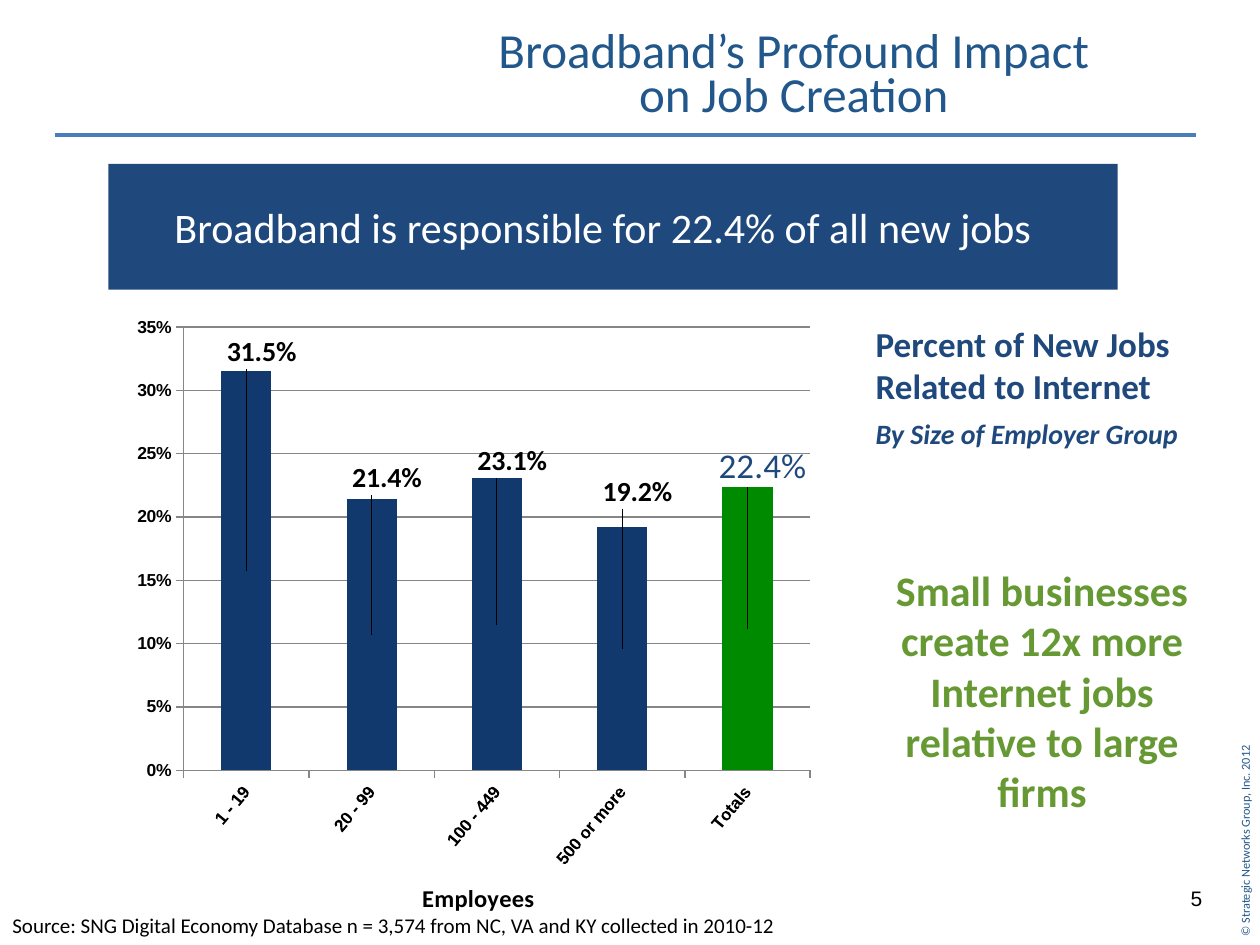
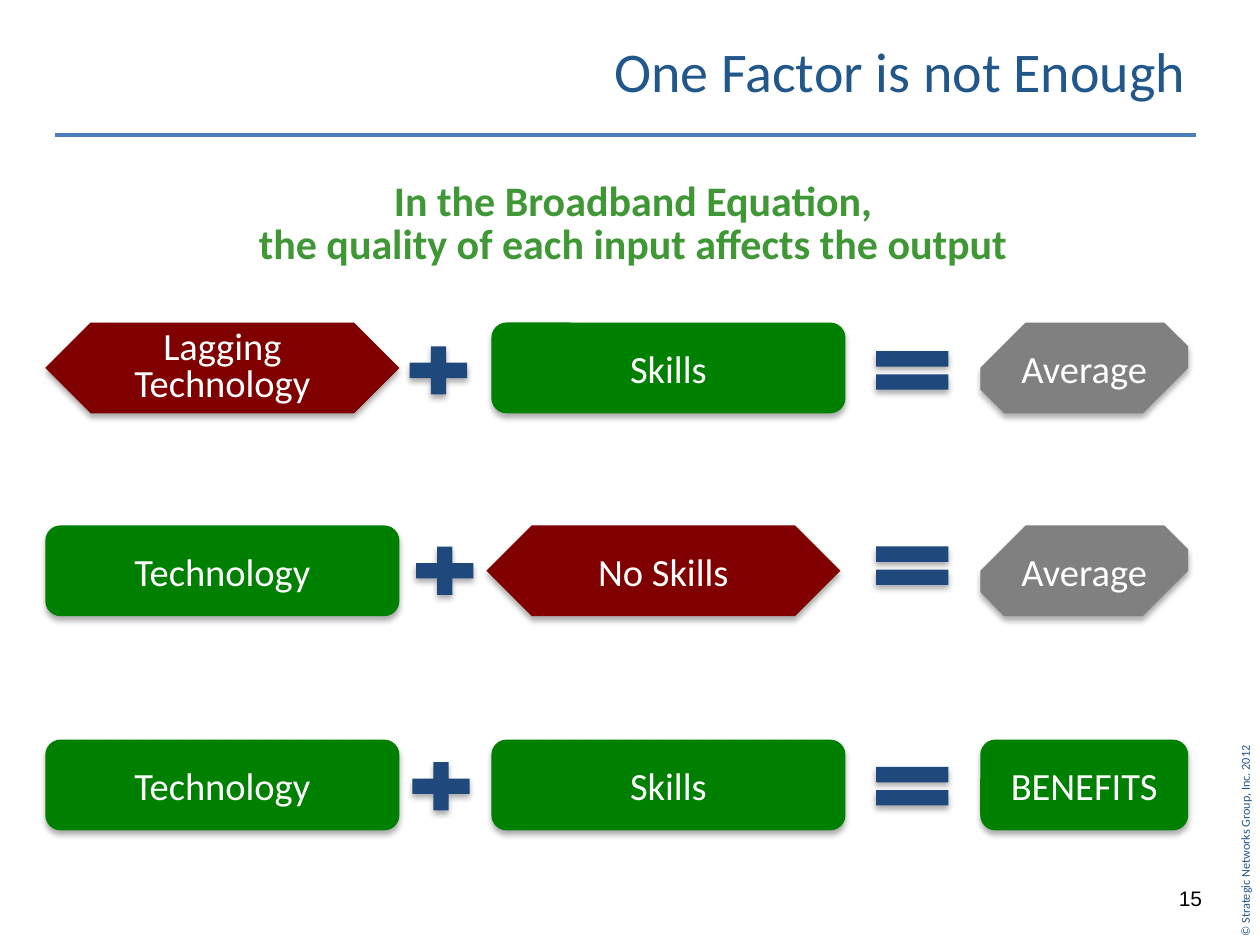
from lxml.etree import SubElement
from pptx import Presentation
from pptx.chart.data import CategoryChartData
from pptx.dml.color import RGBColor
from pptx.enum.chart import XL_CHART_TYPE, XL_TICK_MARK
from pptx.enum.shapes import MSO_CONNECTOR, MSO_SHAPE
from pptx.enum.text import MSO_ANCHOR, PP_ALIGN
from pptx.oxml import parse_xml
from pptx.oxml.ns import nsdecls, qn
from pptx.util import Inches, Pt

TITLE = RGBColor(0x21, 0x57, 0x8A)
RULE = RGBColor(0x4A, 0x7E, 0xBB)
NAVY = RGBColor(0x1F, 0x49, 0x7D)
BAR = RGBColor(0x12, 0x39, 0x6E)
TOTAL = RGBColor(0x00, 0x8A, 0x00)
GRID = RGBColor(0x86, 0x86, 0x86)
LIME = RGBColor(0x66, 0x99, 0x33)
LEAF = RGBColor(0x40, 0x97, 0x36)
GREEN = RGBColor(0x00, 0x80, 0x00)
RED = RGBColor(0x80, 0x00, 0x00)
GRAY = RGBColor(0x80, 0x80, 0x80)
BLACK = RGBColor(0, 0, 0)
WHITE = RGBColor(0xFF, 0xFF, 0xFF)

LEFT, MID, RIGHT = PP_ALIGN.LEFT, PP_ALIGN.CENTER, PP_ALIGN.RIGHT
GOOD = (MSO_SHAPE.ROUNDED_RECTANGLE, GREEN, None)
WEAK = (MSO_SHAPE.SNIP_2_DIAG_RECTANGLE, RED, (0.5, 0.5))
FAIR = (MSO_SHAPE.SNIP_2_DIAG_RECTANGLE, GRAY, (0.5, 0.263))


def style(font, size, color, bold=False, italic=False, face="Calibri"):
    """Set the look of a font."""
    font.name, font.size = face, Pt(size)
    font.bold, font.italic = bold, italic
    font.color.rgb = color


def write(frame, lines, size, color, align=LEFT, space=None, after=0, **look):
    """Fill a text frame with one paragraph for each line."""
    for i, line in enumerate(lines.split("\n")):
        para = frame.add_paragraph() if i else frame.paragraphs[0]
        para.alignment = align
        if space:
            para.line_spacing = space
        if after and i:
            para.space_after = Pt(after)
        run = para.add_run()
        run.text = line
        style(run.font, size, color, **look)
    return frame


def label(slide, box, lines, size, color, anchor=MSO_ANCHOR.TOP, **look):
    """Add a text box that wraps."""
    shape = slide.shapes.add_textbox(*map(Inches, box))
    shape.text_frame.word_wrap = True
    shape.text_frame.vertical_anchor = anchor
    write(shape.text_frame, lines, size, color, **look)
    return shape


def block(shapes, kind, box, fill, cuts=None):
    """Add a plain filled shape without outline or shadow."""
    shape = shapes.add_shape(kind, *map(Inches, box))
    shape.shadow.inherit = False
    shape.fill.solid()
    shape.fill.fore_color.rgb = fill
    shape.line.fill.background()
    for i, cut in enumerate(cuts or ()):
        shape.adjustments[i] = cut
    shape.text_frame.word_wrap = True
    shape.text_frame.vertical_anchor = MSO_ANCHOR.MIDDLE
    return shape


def shade(shape):
    """Give a shape a soft shadow below it."""
    glow = SubElement(shape._element.spPr.find(qn("a:effectLst")), qn("a:outerShdw"),
                      blurRad=str(Pt(3.5)), dist=str(Pt(2.2)), dir="5400000", rotWithShape="0")
    tone = SubElement(glow, qn("a:srgbClr"), val="000000")
    SubElement(tone, qn("a:alpha"), val="32000")


def base(deck, title, box, number, size, align):
    """Add a slide with title, rule, page number and copyright line."""
    slide = deck.slides.add_slide(deck.slide_layouts[6])
    rule = slide.shapes.add_connector(MSO_CONNECTOR.STRAIGHT, Inches(0.44), Inches(1.07),
                                      Inches(9.49), Inches(1.07))
    rule.line.color.rgb, rule.line.width = RULE, Pt(2.25)
    SubElement(rule._element.spPr, qn("a:effectLst"))
    label(slide, box, title, size, TITLE, MSO_ANCHOR.MIDDLE, align=align, space=0.75)
    label(slide, (8.61, 6.98, 1.03, 0.45), number, 12, BLACK, align=RIGHT, face="Arial")
    note = label(slide, (8.99, 6.47, 1.78, 0.26), "© Strategic Networks Group, Inc. 2012",
                 7, TITLE, MSO_ANCHOR.MIDDLE)
    note.rotation = 270
    note.text_frame.margin_left = Inches(0.06)
    return slide


def place(owner, x, y, w=None, h=None, mode=None, target=None, at=1):
    """Set a manual layout on a chart part."""
    for old in owner.findall(qn("c:layout")):
        owner.remove(old)
    layout = parse_xml(f"<c:layout {nsdecls('c')}/>")
    owner.insert(at, layout)
    manual = SubElement(layout, qn("c:manualLayout"))
    parts = [("layoutTarget", target), ("xMode", mode), ("yMode", mode),
             ("x", x), ("y", y), ("w", w), ("h", h)]
    for name, val in parts:
        if val is not None:
            SubElement(manual, qn(f"c:{name}"), val=str(val))


def tune(axis):
    """Style one axis of the chart."""
    axis.major_tick_mark = XL_TICK_MARK.OUTSIDE
    axis.minor_tick_mark = XL_TICK_MARK.NONE
    axis.format.line.color.rgb = GRID
    style(axis.tick_labels.font, 10, BLACK, bold=True, face="Arial")


def tag(series):
    """Put the value labels above the columns."""
    labels = series.data_labels
    labels.show_value = True
    labels.number_format, labels.number_format_is_linked = "#0.0%", False
    style(labels.font, 16, BLACK, bold=True)
    spots = [(0.02, -0.35), (0.02, -0.25), (0.02, -0.26), (0.02, -0.25), (0.02, -0.26)]
    last = len(spots) - 1
    for i in range(last):
        style(series.points[i].data_label.font, 16, BLACK, bold=True)
    write(series.points[last].data_label.text_frame, "22.4%", 20, NAVY)
    for item, spot in zip(series._element.findall(".//" + qn("c:dLbl")), spots):
        place(item, *spot)


def graph(slide, box):
    """Add the column chart of new jobs by employer size."""
    data = CategoryChartData(number_format="#0.0%")
    data.categories = ["1 - 19", "20 - 99", "100 - 449", "500 or more", "Totals"]
    data.add_series("Series 1", (0.315, 0.214, 0.231, 0.192, 0.224))
    chart = slide.shapes.add_chart(XL_CHART_TYPE.COLUMN_STACKED, *map(Inches, box), data).chart
    chart.has_legend = chart.has_title = False
    style(chart.font, 10, BLACK, face="Arial")
    place(chart._chartSpace.find(".//" + qn("c:plotArea")), 0.1, 0.06, 0.83, 0.71,
          "edge", "inner", 0)

    plot = chart.plots[0]
    plot.gap_width, plot.overlap, plot.vary_by_categories = 150, 100, False
    series = plot.series[0]
    for part, color in ((series, BAR), (series.points[4], TOTAL)):
        part.format.fill.solid()
        part.format.fill.fore_color.rgb = color
    tag(series)

    sizes, share = chart.category_axis, chart.value_axis
    tune(sizes)
    tune(share)
    sizes._element.find(qn("c:txPr")).find(qn("a:bodyPr")).set("rot", "-3000000")
    write(sizes.axis_title.text_frame, "Employees", 14, BLACK, bold=True)
    place(sizes.axis_title._element, 0.41, 0.94, mode="edge")
    share.minimum_scale, share.maximum_scale, share.major_unit = 0, 0.35, 0.05
    share.tick_labels.number_format = "#0%"
    share.tick_labels.number_format_is_linked = False
    share.major_gridlines.format.line.color.rgb = GRID


def jobs(deck):
    """Build the slide on job creation."""
    slide = base(deck, "Broadband’s Profound Impact\non Job Creation",
                 (2.85, 0.26, 6.9, 0.71), "5", 28, MID)
    head = label(slide, (6.84, 2.51, 3, 0.8), "Percent of New Jobs\nRelated to Internet",
                 20, NAVY, bold=True, after=6)
    head.text_frame.margin_left = Inches(0.11)
    para = head.text_frame.add_paragraph()
    run = para.add_run()
    run.text = "By Size of Employer Group"
    style(run.font, 16, NAVY, bold=True, italic=True)
    band = block(slide.shapes, MSO_SHAPE.RECTANGLE, (0.86, 1.3, 8.01, 1), NAVY)
    band.text_frame.margin_right = Inches(0.26)
    write(band.text_frame, "Broadband is responsible for 22.4% of all new jobs",
          24, WHITE, align=MID)
    label(slide, (0, 7.19, 6.84, 0.3),
          "Source: SNG Digital Economy Database n = 3,574 from NC, VA and KY collected in 2010-12",
          12, BLACK)
    graph(slide, (0.86, 2.3, 5.99, 5.01))
    label(slide, (6.89, 4.43, 2.76, 2.12),
          "Small businesses create 12x more Internet jobs relative to large firms",
          24, LIME, align=MID, bold=True)


def sum_row(slide, top, terms, plus, equal):
    """Add one equation: two inputs, their signs and the result."""
    group = slide.shapes.add_group_shape().shapes
    for kind, (x, y), wide in ((MSO_SHAPE.MATH_PLUS, plus, 0.62),
                               (MSO_SHAPE.MATH_EQUAL, (6.85, equal), 0.78)):
        shade(block(group, kind, (x, top + y, wide, 0.52), NAVY))
    for words, (kind, fill, cuts), x, wide, space in terms:
        shape = block(group, kind, (x, top, wide, 0.72), fill, cuts)
        shade(shape)
        write(shape.text_frame, words, 22, WHITE, align=MID, space=space)


def factors(deck):
    """Build the slide on the broadband equation."""
    slide = base(deck, "One Factor is not Enough", (2.65, 0.26, 6.86, 0.71), "15", 32, RIGHT)
    label(slide, (1.26, 1.4, 7.53, 0.98),
          "In the Broadband Equation,\nthe quality of each input affects the output",
          24, LEAF, align=MID, space=0.85, bold=True)
    tech = ("Technology", GOOD, 0.36, 2.81, None)
    slow = ("Lagging Technology", WEAK, 0.36, 2.81, 0.8)
    skill = ("Skills", GOOD, 3.9, 2.81, None)
    none = ("No Skills", WEAK, 3.86, 2.81, None)
    mean = ("Average", FAIR, 7.78, 1.65, None)
    gain = ("BENEFITS", GOOD, 7.78, 1.65, None)
    sum_row(slide, 2.56, (slow, skill, mean), (3.17, 0.12), 0.12)
    sum_row(slide, 4.17, (tech, none, mean), (3.22, 0.1), 0.06)
    sum_row(slide, 5.87, (tech, skill, gain), (3.19, 0.11), 0.11)


def main():
    """Build and save the deck."""
    deck = Presentation()
    deck.slide_width, deck.slide_height = Inches(10), Inches(7.5)
    jobs(deck)
    factors(deck)
    deck.save("out.pptx")


if __name__ == "__main__":
    main()
